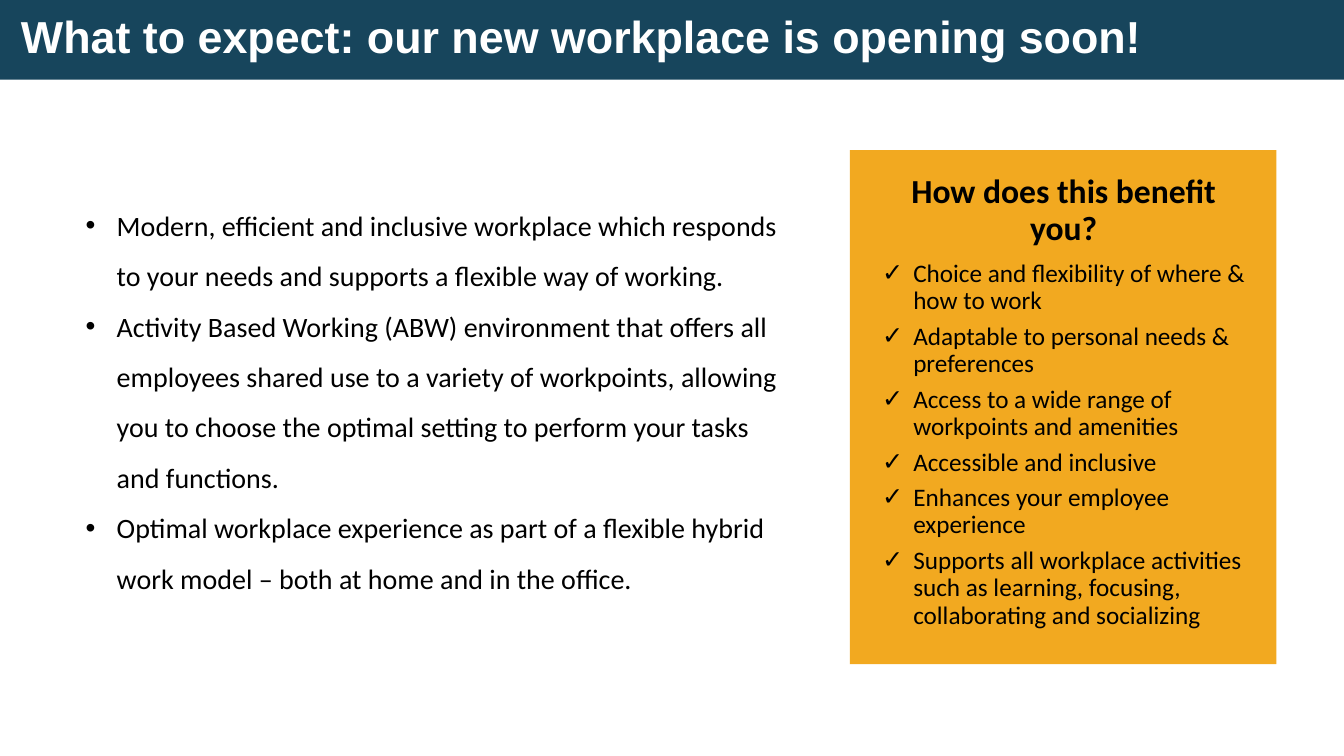
from lxml.etree import SubElement
from pptx import Presentation
from pptx.dml.color import RGBColor
from pptx.enum.shapes import MSO_SHAPE
from pptx.enum.text import MSO_ANCHOR, PP_ALIGN
from pptx.oxml.ns import qn
from pptx.util import Inches, Pt

NAVY, AMBER, WHITE, BLACK = "17455C", "F2A920", "FFFFFF", "000000"

EXPECTATIONS = [
    "Modern, efficient and inclusive workplace which responds to your needs "
    "and supports a flexible way of working.",
    "Activity Based Working (ABW) environment that offers all employees shared "
    "use to a variety of workpoints, allowing you to choose the optimal setting "
    "to perform your tasks and functions.",
    "Optimal workplace experience as part of a flexible hybrid work model – "
    "both at home and in the office.",
]
BENEFITS = [
    "Choice and flexibility of where & how to work",
    "Adaptable to personal needs & preferences",
    "Access to a wide range of workpoints and amenities",
    "Accessible and inclusive",
    "Enhances your employee experience",
    "Supports all workplace activities such as learning, focusing, "
    "collaborating and socializing",
]


def color(hex_code):
    return RGBColor.from_string(hex_code)


def add_block(slide, left, top, width, height, fill):
    block = slide.shapes.add_shape(MSO_SHAPE.RECTANGLE, Inches(left), Inches(top),
                                   Inches(width), Inches(height))
    block.shadow.inherit = False
    block.fill.solid()
    block.fill.fore_color.rgb = color(fill)
    block.line.fill.background()


def set_bullet(paragraph, char, margin, hanging):
    properties = paragraph._p.get_or_add_pPr()
    properties.set("marL", str(Inches(margin)))
    properties.set("indent", str(-Inches(hanging)))
    SubElement(properties, qn("a:buFont"), typeface="Arial")
    SubElement(properties, qn("a:buChar"), char=char)


def add_text(slide, left, top, width, height, paragraphs, size, *, font="Calibri",
             fill=BLACK, bold=False, align=PP_ALIGN.LEFT, anchor=MSO_ANCHOR.MIDDLE,
             line_spacing=0.9, space_after=0, bullet=None, margin=0):
    frame = slide.shapes.add_textbox(Inches(left), Inches(top), Inches(width),
                                     Inches(height)).text_frame
    frame.word_wrap = True
    frame.vertical_anchor = anchor
    for index, text in enumerate(paragraphs):
        paragraph = frame.paragraphs[0] if index == 0 else frame.add_paragraph()
        paragraph.alignment = align
        paragraph.line_spacing = line_spacing
        paragraph.space_after = Pt(space_after)
        if bullet:
            set_bullet(paragraph, bullet, margin, hanging=0.31)
        run = paragraph.add_run()
        run.text = text
        run.font.name = font
        run.font.size = Pt(size)
        run.font.bold = bold
        run.font.color.rgb = color(fill)


def add_title_band(slide, left, top, width, height):
    add_block(slide, left, top, width, height, NAVY)
    add_text(slide, left + 0.11, top + 0.1, width - 1.05, height - 0.22,
             ["What to expect: our new workplace is opening soon!"], 32,
             font="Arial", fill=WHITE, bold=True)


def add_expectations(slide, left, top, width, height):
    add_text(slide, left, top, width, height, EXPECTATIONS, 20,
             anchor=MSO_ANCHOR.TOP, line_spacing=1.5, bullet="•", margin=0.81)


def add_benefits_panel(slide, left, top, width, height):
    add_block(slide, left, top, width, height, AMBER)
    add_text(slide, left + 0.43, top - 0.13, width - 0.85, 1.47,
             ["How does this benefit you?"], 24, bold=True, align=PP_ALIGN.CENTER)
    add_text(slide, left + 0.15, top + 0.85, width - 0.3, height - 0.95,
             BENEFITS, 18, space_after=6, bullet="✓", margin=0.38)


def main():
    deck = Presentation()
    deck.slide_width, deck.slide_height = Inches(13.33), Inches(7.5)
    slide = deck.slides.add_slide(deck.slide_layouts[6])
    add_title_band(slide, 0, 0, 13.33, 0.79)
    add_expectations(slide, 0.25, 1.85, 7.63, 4.09)
    add_benefits_panel(slide, 8.43, 1.49, 4.23, 5.1)
    deck.save("out.pptx")


if __name__ == "__main__":
    main()
